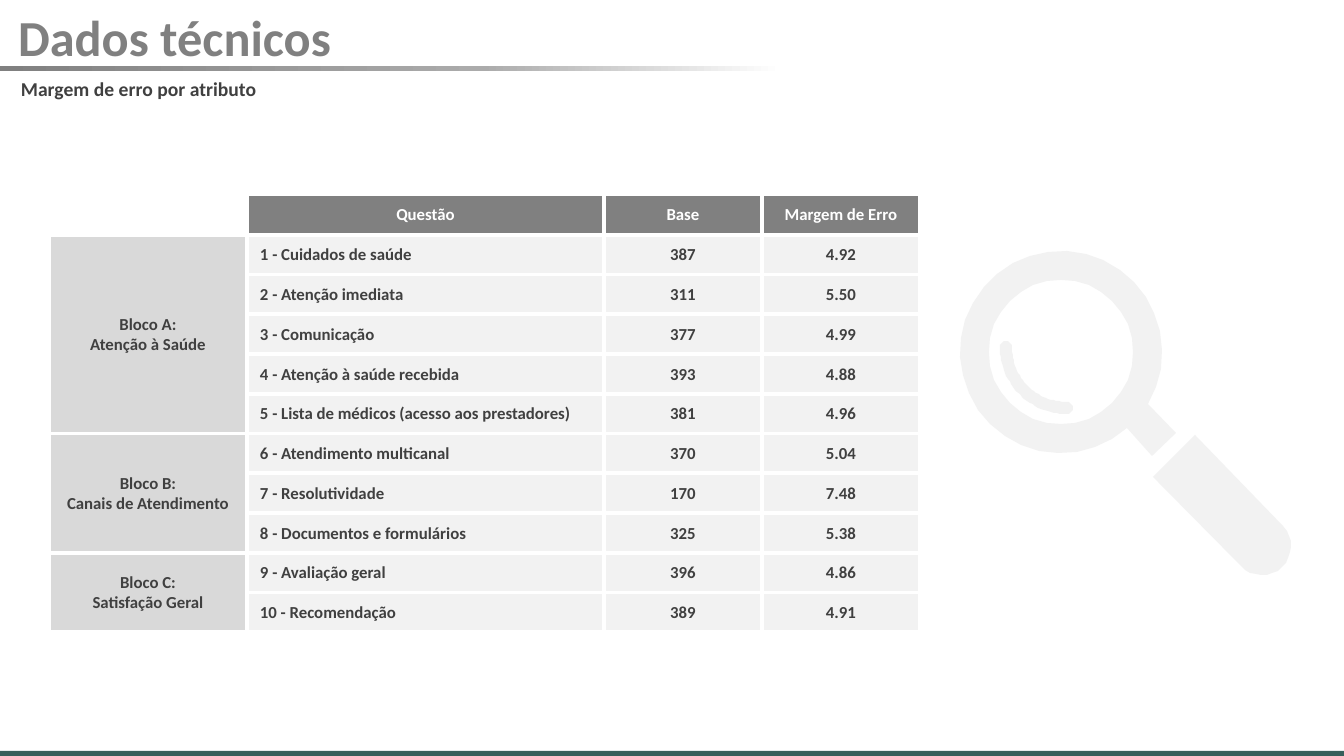
from math import cos, radians, sin

from lxml.etree import SubElement
from pptx import Presentation
from pptx.dml.color import RGBColor
from pptx.enum.shapes import MSO_SHAPE
from pptx.enum.text import MSO_ANCHOR, MSO_AUTO_SIZE, PP_ALIGN
from pptx.oxml.ns import qn
from pptx.util import Emu, Pt

GREY, DARK, WHITE = "808080", "404040", "FFFFFF"
PALE, MEDIUM, GREEN = "F2F2F2", "D9D9D9", "365E5A"

COLUMN_WIDTHS = [198, 357, 158, 158]
HEADINGS = ["Questão", "Base", "Margem de Erro"]
BLOCKS = [
    ("Bloco A:\nAtenção à Saúde", [
        ("1 - Cuidados de saúde", "387", "4.92"),
        ("2 - Atenção imediata", "311", "5.50"),
        ("3 - Comunicação", "377", "4.99"),
        ("4 - Atenção à saúde recebida", "393", "4.88"),
        ("5 - Lista de médicos (acesso aos prestadores)", "381", "4.96"),
    ]),
    ("Bloco B:\nCanais de Atendimento", [
        ("6 - Atendimento multicanal", "370", "5.04"),
        ("7 - Resolutividade", "170", "7.48"),
        ("8 - Documentos e formulários", "325", "5.38"),
    ]),
    ("Bloco C:\nSatisfação Geral", [
        ("9 - Avaliação geral", "396", "4.86"),
        ("10 - Recomendação", "389", "4.91"),
    ]),
]


def px(length):
    return Emu(round(length * 914400 / 100.8))


def rgb(color):
    return RGBColor.from_string(color)


def set_font(para, size, color):
    font = para.font
    font.name, font.size, font.bold = "Calibri", Pt(size), True
    font.color.rgb = rgb(color)


def place(shape, left, top, width, height):
    shape.left, shape.top = px(left), px(top)
    shape.width, shape.height = px(width), px(height)


def paint(shape, color):
    shape.shadow.inherit = False
    shape.fill.solid()
    shape.fill.fore_color.rgb = rgb(color)
    shape.line.fill.background()


def add_bar(page, left, top, width, height, color):
    bar = page.shapes.add_shape(
        MSO_SHAPE.RECTANGLE, px(left), px(top), px(width), px(height))
    paint(bar, color)
    return bar


def set_gradient(shape, stops):
    shape.fill.gradient()
    shape.fill.gradient_angle = 0
    stop_list = shape.fill._xPr.find(".//" + qn("a:gsLst"))
    stop_list.clear()
    for percent, color in stops:
        stop = SubElement(stop_list, qn("a:gs"), pos=str(percent * 1000))
        SubElement(stop, qn("a:srgbClr"), val=color)


def add_title(page, text):
    title = page.shapes.title
    place(title, 8, 6, 1320, 69)
    frame = title.text_frame
    frame.text = text
    frame.auto_size = MSO_AUTO_SIZE.NONE
    frame.vertical_anchor = MSO_ANCHOR.MIDDLE
    para = frame.paragraphs[0]
    para.alignment = PP_ALIGN.LEFT
    para.line_spacing = 0.9
    set_font(para, 36, GREY)


def add_subtitle(page, text):
    box = page.shapes.add_textbox(px(11), px(72), px(257), px(34))
    box.text_frame.text = text
    set_font(box.text_frame.paragraphs[0], 14, DARK)


def set_borders(cell):
    properties = cell._tc.get_or_add_tcPr()
    for position, side in enumerate(("lnL", "lnR", "lnT", "lnB")):
        line = properties.makeelement(qn("a:" + side), {"w": str(Pt(3))})
        fill = SubElement(line, qn("a:solidFill"))
        SubElement(fill, qn("a:srgbClr"), val=WHITE)
        properties.insert(position, line)


def fill_cell(cell, text, fill, color=DARK, indent=None):
    cell.text = text
    cell.vertical_anchor = MSO_ANCHOR.MIDDLE
    cell.margin_left = px(indent or 1)
    cell.margin_right = cell.margin_top = px(1)
    cell.margin_bottom = 0
    cell.fill.solid()
    cell.fill.fore_color.rgb = rgb(fill)
    for para in cell.text_frame.paragraphs:
        para.alignment = PP_ALIGN.LEFT if indent else PP_ALIGN.CENTER
        set_font(para, 12, color)


def add_error_table(page):
    row_count = 1 + sum(len(questions) for _, questions in BLOCKS)
    table = page.shapes.add_table(
        row_count, len(COLUMN_WIDTHS), px(49), px(194),
        px(sum(COLUMN_WIDTHS)), px(437)).table
    table.first_row = table.horz_banding = False
    for column, width in zip(table.columns, COLUMN_WIDTHS):
        column.width = px(width)
    for cell in table.iter_cells():
        set_borders(cell)

    table.cell(0, 0).fill.background()
    for column, heading in enumerate(HEADINGS, 1):
        fill_cell(table.cell(0, column), heading, GREY, WHITE)

    row = 1
    for block, questions in BLOCKS:
        block_cell = table.cell(row, 0)
        block_cell.merge(table.cell(row + len(questions) - 1, 0))
        fill_cell(block_cell, block, MEDIUM)
        for question, base, margin in questions:
            fill_cell(table.cell(row, 1), question, PALE, indent=13)
            fill_cell(table.cell(row, 2), base, PALE)
            fill_cell(table.cell(row, 3), margin, PALE)
            row += 1


def arc(x, y, radius, start, end, steps=32):
    angles = [radians(start + (end - start) * step / steps)
              for step in range(steps + 1)]
    return [(x + radius * cos(angle), y + radius * sin(angle))
            for angle in angles]


def add_outline(page, *contours):
    scale = px(100) / 100
    builder = page.shapes.build_freeform(*contours[0][0], scale=scale)
    builder.add_line_segments(contours[0][1:])
    for contour in contours[1:]:
        builder.move_to(*contour[0])
        builder.add_line_segments(contour[1:])
    paint(builder.convert_to_shape(), PALE)


def add_magnifier(page):
    # Rim with its neck, and the lens opening
    rim = arc(1061, 352, 101, 49, 391) + [(1176, 433), (1152, 456)]
    add_outline(page, rim, arc(1061, 352, 72, 360, 0))
    # Glare with rounded ends
    add_outline(page, arc(1067, 347, 67, 90, 180)
                + arc(1006, 347, 6, 180, 360, 8)
                + arc(1067, 347, 55, 180, 90)
                + arc(1067, 408, 6, 270, 450, 8))
    # Handle
    add_outline(page, [(1153, 477), (1195, 435)]
                + arc(1262, 546, 29, -43, 136, 16))


def main():
    deck = Presentation()
    deck.slide_width, deck.slide_height = px(1344), px(756)
    page = deck.slides.add_slide(deck.slide_layouts[5])

    # Rule under the title and strip at the foot
    rule = add_bar(page, 0, 66, 860, 5, GREY)
    set_gradient(rule, [(0, GREY), (56, "ABABAB"), (91, WHITE)])
    add_bar(page, 0, 751, 1344, 8, GREEN)

    # Content
    add_error_table(page)
    add_magnifier(page)
    add_title(page, "Dados técnicos")
    add_subtitle(page, "Margem de erro por atributo")

    deck.save("out.pptx")


if __name__ == "__main__":
    main()
